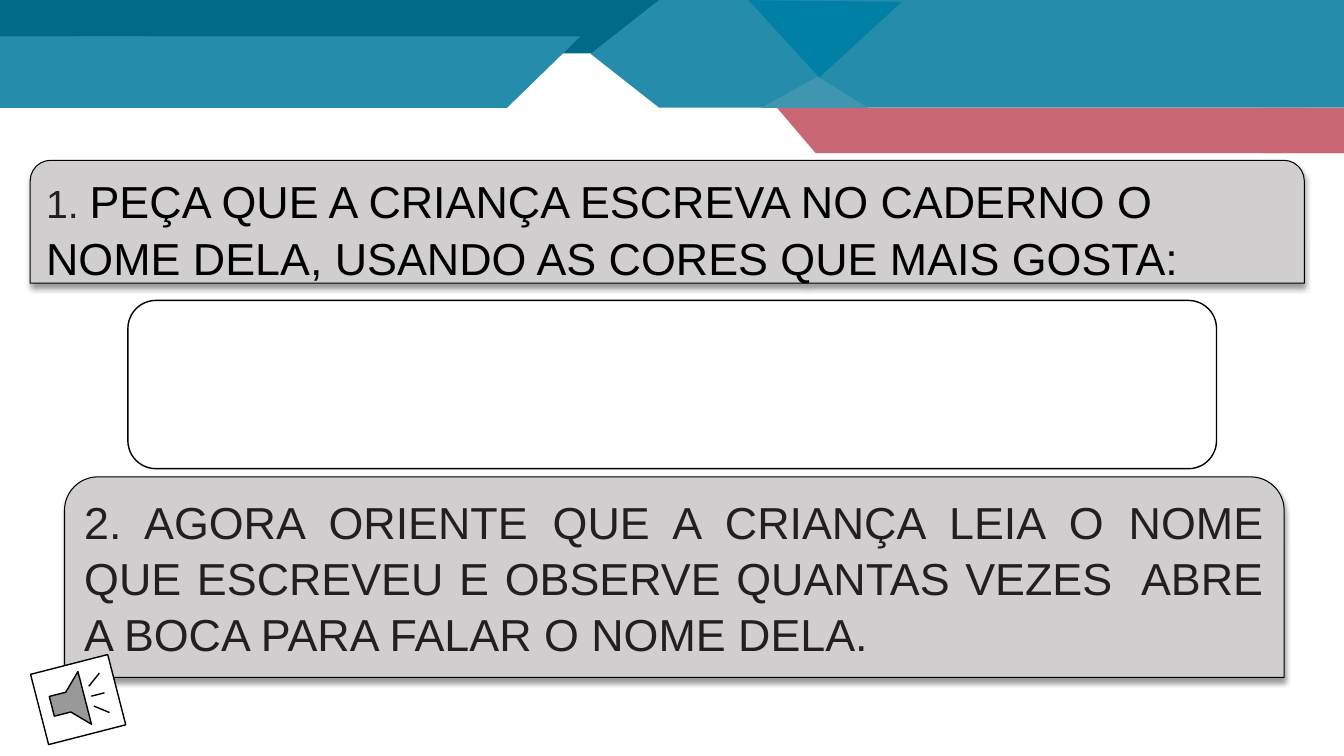
from dataclasses import dataclass

from lxml import etree
from pptx import Presentation
from pptx.dml.color import RGBColor
from pptx.enum.shapes import MSO_SHAPE
from pptx.enum.text import MSO_ANCHOR, PP_ALIGN
from pptx.oxml.ns import qn
from pptx.shapes.autoshape import Shape
from pptx.util import Pt

HALF_FRAME = MSO_SHAPE.HALF_FRAME
PARALLELOGRAM = MSO_SHAPE.PARALLELOGRAM
RECT = MSO_SHAPE.RECTANGLE
ARROW_BLOCK = MSO_SHAPE.PENTAGON
TRIANGLE = MSO_SHAPE.ISOSCELES_TRIANGLE
RIGHT_TRIANGLE = MSO_SHAPE.RIGHT_TRIANGLE
ROUND_TOP = MSO_SHAPE.ROUND_2_SAME_RECTANGLE
ROUND_RECT = MSO_SHAPE.ROUNDED_RECTANGLE
SOUND = MSO_SHAPE.ACTION_BUTTON_SOUND
LEFT, JUSTIFY = PP_ALIGN.LEFT, PP_ALIGN.JUSTIFY
TOP = MSO_ANCHOR.TOP

COLORS = {
    "dark_teal": "006A88",
    "teal": "258DAB",
    "pale_teal": "3F96B0",
    "blue": "0080A5",
    "rose": "C86673",
    "navy": "325491",
    "gray": "D0CECE",
    "white": "FFFFFF",
    "black": "000000",
    "ink": "231F20",
}


@dataclass
class Block:
    kind: MSO_SHAPE
    box: tuple[float, float, float, float]
    fill: str
    adjust: tuple[float, ...] = ()
    flip: bool = False
    rotation: float = 0
    line: str = ""
    line_width: float = 1


@dataclass
class Run:
    text: str
    size: float
    color: str


@dataclass
class Instruction:
    box: tuple[float, float, float, float]
    align: PP_ALIGN
    runs: list[Run]


HEADER = [
    Block(HALF_FRAME, (340.6, 0, 177.8, 68.4), "dark_teal", (0.833, 0.77), True, line="navy"),
    Block(PARALLELOGRAM, (0, 0, 518.4, 38.2), "dark_teal", (1.028,)),
    Block(RECT, (0, 0, 107.3, 38.2), "dark_teal"),
    Block(PARALLELOGRAM, (0, 25.9, 414.7, 51.1), "teal", (1.028,)),
    Block(RECT, (0, 25.9, 107.3, 51.1), "teal"),
    Block(ARROW_BLOCK, (421.9, 0, 538.1, 77), "teal", (0.636,), True),
    Block(TRIANGLE, (543.6, 54.7, 76.3, 22.3), "pale_teal", (0.532,)),
    Block(PARALLELOGRAM, (555.1, 77, 404.9, 32.4), "rose", (0.85,), True),
    Block(RECT, (900, 77, 60, 32.4), "rose"),
]
HEADER_FACET = Block(RIGHT_TRIANGLE, (549.4, -36.7, 79.9, 74.9), "blue", rotation=317.5)
SOUND_BUTTON = Block(SOUND, (27.4, 473.8, 56.9, 51.8), "white", rotation=345.6, line="black")
ANSWER_BOX = Block(ROUND_RECT, (91.4, 214.6, 777.6, 120.2), "white", line="black")

INSTRUCTIONS = [
    Instruction((21.6, 114.5, 910.1, 87.8), LEFT, [
        Run("1. ", 28, "ink"),
        Run("PEÇA QUE A CRIANÇA ESCREVA NO CADERNO O NOME DELA, "
            "USANDO AS CORES QUE MAIS GOSTA:", 32, "black"),
    ]),
    Instruction((46.1, 340.6, 871.2, 143.3), JUSTIFY, [
        Run("2. AGORA ORIENTE QUE A CRIANÇA LEIA O NOME QUE ESCREVEU E OBSERVE "
            "QUANTAS VEZES  ABRE A BOCA PARA FALAR O NOME DELA.", 32, "ink"),
    ]),
]


def rgb(name: str) -> RGBColor:
    return RGBColor.from_string(COLORS[name])


def add_block(shapes, block: Block) -> Shape:
    sp = shapes.add_shape(block.kind, *(Pt(v) for v in block.box))
    sp.shadow.inherit = False
    sp.fill.solid()
    sp.fill.fore_color.rgb = rgb(block.fill)
    if block.line:
        sp.line.color.rgb = rgb(block.line)
        sp.line.width = Pt(block.line_width)
    else:
        sp.line.fill.background()
    for i, value in enumerate(block.adjust):
        sp.adjustments[i] = value
    sp.rotation = block.rotation
    if block.flip:
        sp.element.spPr.xfrm.set("flipH", "1")
    return sp


def add_drop_shadow(sp: Shape) -> None:
    effects = sp.element.spPr.find(qn("a:effectLst"))
    shadow = etree.SubElement(effects, qn("a:outerShdw"), blurRad=str(Pt(4)),
                              dist=str(Pt(3)), dir="5400000", rotWithShape="0")
    color = etree.SubElement(shadow, qn("a:srgbClr"), val=COLORS["black"])
    etree.SubElement(color, qn("a:alpha"), val="40000")


def add_instruction(shapes, item: Instruction) -> None:
    sp = add_block(shapes, Block(ROUND_TOP, item.box, "gray", line="black", line_width=0.75))
    add_drop_shadow(sp)
    tf = sp.text_frame
    tf.word_wrap = True
    tf.vertical_anchor = TOP
    p = tf.paragraphs[0]
    p.alignment = item.align
    p.line_spacing = 1.05
    p.font.name = "Arial"
    for run in item.runs:
        r = p.add_run()
        r.text = run.text
        r.font.name = "Arial"
        r.font.size = Pt(run.size)
        r.font.color.rgb = rgb(run.color)


def main() -> None:
    prs = Presentation()
    prs.slide_width, prs.slide_height = Pt(960), Pt(540)
    s = prs.slides.add_slide(prs.slide_layouts[6])
    header = s.shapes.add_group_shape()
    for block in HEADER:
        add_block(header.shapes, block)
    add_block(s.shapes, HEADER_FACET)
    for item in INSTRUCTIONS:
        add_instruction(s.shapes, item)
    add_block(s.shapes, SOUND_BUTTON)
    add_block(s.shapes, ANSWER_BOX)
    prs.save("out.pptx")


if __name__ == "__main__":
    main()
